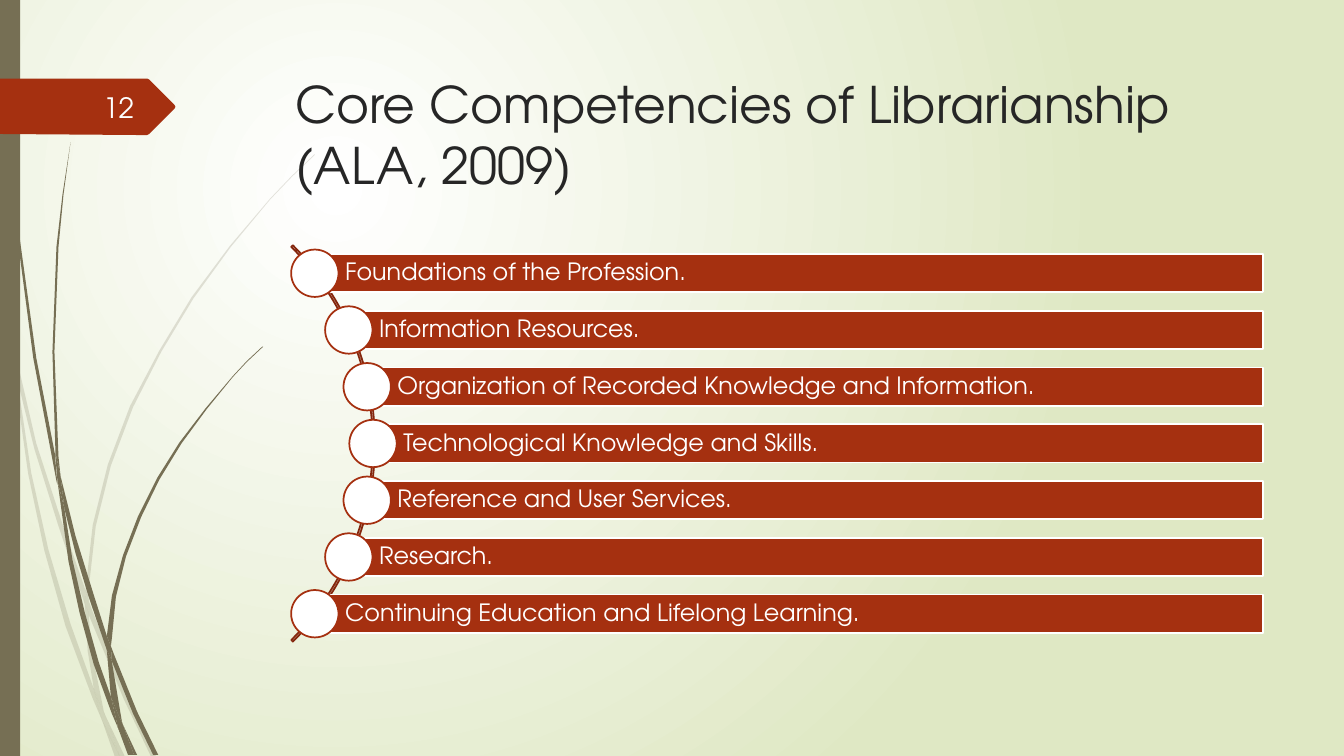
from math import sqrt
from lxml.etree import SubElement
from pptx import Presentation
from pptx.dml.color import RGBColor
from pptx.enum.shapes import MSO_SHAPE
from pptx.enum.text import MSO_ANCHOR, PP_ALIGN
from pptx.oxml.ns import qn
from pptx.util import Inches, Pt

# Content
TITLE = "Core Competencies of Librarianship\v(ALA, 2009)"
NUMBER = "12"
SKILLS = [
    "Foundations of the Profession.",
    "Information Resources.",
    "Organization of Recorded Knowledge and Information.",
    "Technological Knowledge and Skills.",
    "Reference and User Services.",
    "Research.",
    "Continuing Education and Lifelong Learning.",
]
FACE = "TeX Gyre Adventor"
HUES = {"white": "FFFFFF", "pale": "DFE8C4", "stem": "766F54", "red": "A53010",
        "dark": "84260D", "ink": "262626", "page": "FEFFFF"}

# Grass pieces: corners of each outline, in inches
FAINT = [
    [(.11, 3.5), (.09, 3.22), (0, 2.82), (0, 2.99), (.1, 3.44)],
    [(.58, 5.22), (.84, 5.99), (.85, 5.86), (.62, 5.2), (.36, 4.4), (.14, 3.45),
     (.17, 3.76), (.34, 4.45)],
    [(.92, 6.07), (.88, 5.96), (.88, 6.1), (1.23, 6.94), (1.5, 7.51), (1.55, 7.51),
     (1.27, 6.92)],
    [(1.19, 7.51), (1.24, 7.51), (1.05, 7.11)],
    [(.93, 6.83), (.7, 6.19), (.48, 5.45), (.31, 4.69), (.17, 3.76), (.11, 3.5),
     (.28, 4.7), (.44, 5.46), (.65, 6.21), (.92, 6.93), (1.01, 7.14), (.99, 7.07)],
    [(.84, 5.99), (.87, 6.46), (.93, 6.83), (.96, 6.92), (1.05, 7.11), (1.03, 7.06),
     (.91, 6.46), (.88, 6.1), (.88, 6.08)],
    [(.88, 5.84), (.95, 5.22), (1.1, 4.62), (1.32, 4.04), (1.6, 3.49), (1.92, 2.96),
     (2.29, 2.45), (2.68, 1.98), (2.9, 1.75), (3.12, 1.54), (3.12, 1.53), (2.89, 1.75),
     (2.68, 1.97), (2.28, 2.44), (1.9, 2.95), (1.58, 3.48), (1.29, 4.03), (1.07, 4.61),
     (.92, 5.21), (.85, 5.84), (.85, 5.86), (.88, 5.96)],
    [(1.01, 7.14), (1.14, 7.51), (1.19, 7.51)],
    [(.88, 6.08), (.88, 6.1), (.88, 5.96), (.85, 5.86), (.84, 5.99)],
    [(.96, 6.92), (.93, 6.83), (.99, 7.07), (1.01, 7.14), (1.19, 7.51), (1.05, 7.11)],
]
BOLD = [
    [(.07, 1.1), (.17, 2.33), (.33, 3.55), (.56, 4.77), (.57, 4.81), (.55, 4.57),
     (.55, 4.53), (.36, 3.55), (.19, 2.32), (.08, 1.09), (.05, .48), (.04, 0),
     (.03, 0), (.04, .48)],
    [(.88, 5.92), (1.06, 6.45), (1.06, 6.33), (1.06, 6.31), (.93, 5.9), (.75, 5.32),
     (.6, 4.72), (.64, 5.05), (.75, 5.49)],
    [(1.13, 6.49), (1.1, 6.41), (1.11, 6.56), (1.32, 7.08), (1.52, 7.49), (1.57, 7.49),
     (1.36, 7.06)],
    [(1.1, 6.91), (.98, 6.57), (.84, 6.07), (.72, 5.56), (.64, 5.05), (.57, 4.77),
     (.68, 5.57), (.79, 6.08), (.93, 6.59), (1.11, 7.08), (1.17, 7.22), (1.16, 7.17)],
    [(.6, 4.72), (.58, 4.53), (.54, 3.49), (.58, 2.45), (.63, 1.93), (.7, 1.41),
     (.62, 1.93), (.56, 2.45), (.52, 3.49), (.55, 4.49)],
    [(1.33, 7.49), (1.36, 7.49), (1.22, 7.19)],
    [(.57, 4.77), (.64, 5.05), (.6, 4.72), (.55, 4.49), (.55, 4.53)],
    [(1.11, 6.33), (1.15, 5.92), (1.25, 5.52), (1.4, 5.13), (1.58, 4.76), (1.8, 4.4),
     (2.05, 4.06), (2.31, 3.74), (2.45, 3.59), (2.61, 3.44), (2.6, 3.44), (2.45, 3.58),
     (2.31, 3.73), (2.04, 4.05), (1.78, 4.39), (1.56, 4.74), (1.37, 5.12), (1.22, 5.51),
     (1.11, 5.91), (1.06, 6.31), (1.1, 6.41)],
    [(1.17, 7.22), (1.27, 7.49), (1.31, 7.49)],
    [(1.06, 6.45), (1.1, 6.91), (1.16, 7.06), (1.22, 7.19), (1.21, 7.16), (1.11, 6.56),
     (1.09, 6.51)],
    [(1.06, 6.45), (1.09, 6.51), (1.11, 6.56), (1.1, 6.41), (1.06, 6.31), (1.06, 6.33)],
    [(1.16, 7.06), (1.1, 6.91), (1.16, 7.17), (1.17, 7.22), (1.3, 7.49), (1.33, 7.49),
     (1.22, 7.19)],
]
FLAG = [(1.73, 1.08), (1.48, 1.33), (1.46, 1.34), (1.36, 1.34), (0, 1.33), (0, .78),
        (1.36, .78), (1.46, .78), (1.48, .79), (1.73, 1.04), (1.74, 1.06)]

# Sizes in inches
MID = (.94, 4.4)
RAD = 2.76
STEP, DOT, TALL, EDGE = .563, .47, .38, 12.53

deck = Presentation()
deck.slide_width, deck.slide_height = Inches(13.33), Inches(7.5)
slide = deck.slides.add_slide(deck.slide_layouts[6])
shapes = slide.shapes


def tint(name):
    return RGBColor.from_string(HUES[name])


def put(obj, vals):
    for key, val in vals.items():
        setattr(obj, key, val)


def paint(item, fill=None, line=None):
    item.shadow.inherit = False
    for part, hue in ((item.fill, fill), (item.line.fill, line)):
        if hue:
            part.solid()
            part.fore_color.rgb = tint(hue)
        else:
            part.background()
    if line:
        item.line.width = Pt(1.25)
    return item


def shape(kind, box, fill=None, line=None):
    return paint(shapes.add_shape(kind, *map(Inches, box)), fill, line)


def outline(pts, fill):
    first, *rest = [(Inches(x), Inches(y)) for x, y in pts]
    pen = shapes.build_freeform(*first)
    pen.add_line_segments(rest, close=True)
    return paint(pen.convert_to_shape(), fill)


def write(item, text, size, hue, frame=None, para=None):
    body = item.text_frame
    put(body, {"word_wrap": True, **(frame or {})})
    body.text = text
    line = body.paragraphs[0]
    put(line, {"alignment": PP_ALIGN.LEFT, **(para or {})})
    for run in line.runs:
        put(run.font, {"name": FACE, "size": Pt(size)})
        run.font.color.rgb = tint(hue)


# Background glow
fill = slide.background.fill
fill.gradient()
for stop, hue, spot in zip(fill.gradient_stops, ("white", "pale"), (0, 1)):
    stop.color.rgb = tint(hue)
    stop.position = spot
grad = slide.background._cSld.find(".//" + qn("a:gradFill"))
grad.remove(grad.find(qn("a:lin")))
glow = SubElement(grad, qn("a:path"), path="circle")
SubElement(glow, qn("a:fillToRect"), l="50000", t="50000", r="100000", b="100000")

# Grass, side strip and page flag
for pts in FAINT:
    hue = outline(pts, "stem").fill._xPr.find(".//" + qn("a:srgbClr"))
    SubElement(hue, qn("a:alpha"), val="20000")
for pts in BOLD:
    outline(pts, "stem")
shape(MSO_SHAPE.RECTANGLE, (0, 0, .2, 7.5), "stem")
outline(FLAG, "red")

# Title and page number
title = shapes.add_textbox(*map(Inches, (2.83, .68, 9.75, 1.4)))
write(title, TITLE, 36, "ink", {"vertical_anchor": MSO_ANCHOR.TOP})
page = shapes.add_textbox(*map(Inches, (.58, .86, .85, .4)))
write(page, NUMBER, 20, "page", {"vertical_anchor": MSO_ANCHOR.MIDDLE},
      {"alignment": PP_ALIGN.RIGHT})

# Arc behind the list
arc = shape(MSO_SHAPE.BLOCK_ARC, (-1.84, 1.62, 5.56, 5.56), line="dark")
for i, val in enumerate((189, 27, .004)):
    arc.adjustments[i] = val

# Bars and dots follow the arc
pads = {"margin_left": Inches(.3), "vertical_anchor": MSO_ANCHOR.MIDDLE}
pads |= {f"margin_{side}": Inches(.05) for side in ("top", "right", "bottom")}
for i, skill in enumerate(SKILLS):
    dy = (i - (len(SKILLS) - 1) / 2) * STEP
    x, y = MID[0] + sqrt(RAD ** 2 - dy ** 2), MID[1] + dy
    bar = shape(MSO_SHAPE.RECTANGLE, (x, y - TALL / 2, EDGE - x, TALL), "red", "white")
    write(bar, skill, 17, "white", pads, {"line_spacing": .9})
    shape(MSO_SHAPE.OVAL, (x - DOT / 2, y - DOT / 2, DOT, DOT), "white", "red")

deck.save("out.pptx")
